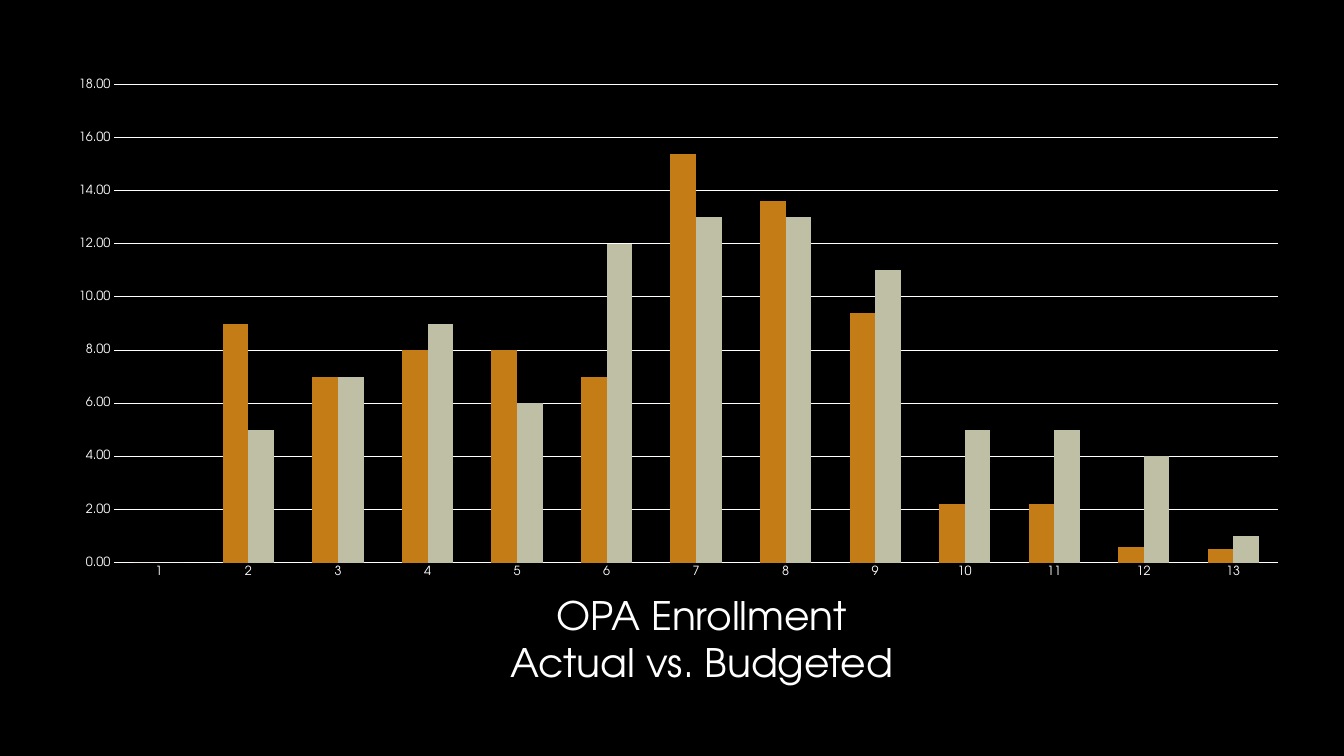
"""Build the enrollment slide with its actual versus budgeted column chart."""
from dataclasses import dataclass

import pptx
import pptx.chart.data
import pptx.dml.color
import pptx.enum.chart
import pptx.enum.text
import pptx.oxml
import pptx.oxml.ns
import pptx.slide
import pptx.util
from pptx.util import Inches

BLACK = pptx.dml.color.RGBColor(0x00, 0x00, 0x00)
WHITE = pptx.dml.color.RGBColor(0xFF, 0xFF, 0xFF)
ORANGE = pptx.dml.color.RGBColor(0xC4, 0x7C, 0x16)
SAGE = pptx.dml.color.RGBColor(0xBF, 0xBF, 0xA5)

ENROLLMENT = {
    "Series 1": (ORANGE, (0, 9, 7, 8, 8, 7, 15.4, 13.6, 9.4, 2.2, 2.2, 0.6, 0.5)),
    "Series 2": (SAGE, (0, 5, 7, 9, 6, 12, 13, 13, 11, 5, 5, 4, 1)),
}
PERIODS = [str(number) for number in range(1, 14)]
PLOT_AREA = {"x": 0.052, "y": 0.094, "w": 0.948, "h": 0.784}


def apply(target, values):
    for key, value in values.items():
        setattr(target, key, value)


@dataclass
class SlideWriter:
    slide: pptx.slide.Slide
    typeface: str = "TeX Gyre Adventor"
    ink: pptx.dml.color.RGBColor = WHITE

    def background(self, color):
        fill = self.slide.background.fill
        fill.solid()
        fill.fore_color.rgb = color

    def style_font(self, font, size):
        apply(font, {"name": self.typeface, "size": pptx.util.Pt(size), "bold": False})
        font.color.rgb = self.ink

    def caption(self, lines, box, size):
        frame = self.slide.shapes.add_textbox(*box).text_frame
        apply(frame, {"word_wrap": True, "text": "\n".join(lines)})
        for paragraph in frame.paragraphs:
            paragraph.alignment = pptx.enum.text.PP_ALIGN.CENTER
            self.style_font(paragraph.runs[0].font, size)

    def style_axis(self, axis, settings):
        none = pptx.enum.chart.XL_TICK_MARK.NONE
        apply(axis, {"major_tick_mark": none, "minor_tick_mark": none, **settings})
        axis.format.line.fill.background()
        self.style_font(axis.tick_labels.font, 9)

    def place_plot(self, chart, layout):
        plot_area = chart.plots[0]._element.getparent()
        for old in plot_area.findall(pptx.oxml.ns.qn("c:layout")):
            plot_area.remove(old)
        sizes = "".join(f'<c:{key} val="{value}"/>' for key, value in layout.items())
        plot_area.insert(0, pptx.oxml.parse_xml(
            f'<c:layout {pptx.oxml.ns.nsdecls("c")}><c:manualLayout>'
            '<c:layoutTarget val="inner"/><c:xMode val="edge"/><c:yMode val="edge"/>'
            f'{sizes}</c:manualLayout></c:layout>'))

    def columns(self, categories, series_table, box, layout):
        data = pptx.chart.data.CategoryChartData(number_format="0.00")
        data.categories = categories
        for name, (_, values) in series_table.items():
            data.add_series(name, values)
        kind = pptx.enum.chart.XL_CHART_TYPE.COLUMN_CLUSTERED
        chart = self.slide.shapes.add_chart(kind, *box, data).chart
        apply(chart, {"has_title": False, "has_legend": False})
        self.style_font(chart.font, 10)
        plot = chart.plots[0]
        apply(plot, {"gap_width": 150, "overlap": 0, "vary_by_categories": False})
        for series, (color, _) in zip(plot.series, series_table.values()):
            series.format.fill.solid()
            series.format.fill.fore_color.rgb = color
        self.style_axis(chart.category_axis, {"has_major_gridlines": False})
        self.style_axis(chart.value_axis, {
            "has_major_gridlines": True, "minimum_scale": 0,
            "maximum_scale": 18, "major_unit": 2})
        apply(chart.value_axis.tick_labels,
              {"number_format": "0.00", "number_format_is_linked": False})
        gridline = chart.value_axis.major_gridlines.format.line
        gridline.width = pptx.util.Pt(0.75)
        gridline.color.rgb = self.ink
        self.place_plot(chart, layout)


def main():
    deck = pptx.Presentation()
    apply(deck, {"slide_width": Inches(13.33), "slide_height": Inches(7.5)})
    writer = SlideWriter(deck.slides.add_slide(deck.slide_layouts[6]))
    writer.background(BLACK)
    chart_box = [Inches(length) for length in (0.5, 0.27, 12.18, 6.05)]
    writer.columns(PERIODS, ENROLLMENT, chart_box, PLOT_AREA)
    caption_box = [Inches(length) for length in (2.2, 5.82, 9.52, 1.04)]
    writer.caption(["OPA Enrollment", "Actual vs. Budgeted"], caption_box, 28)
    deck.save("out.pptx")


if __name__ == "__main__":
    main()
